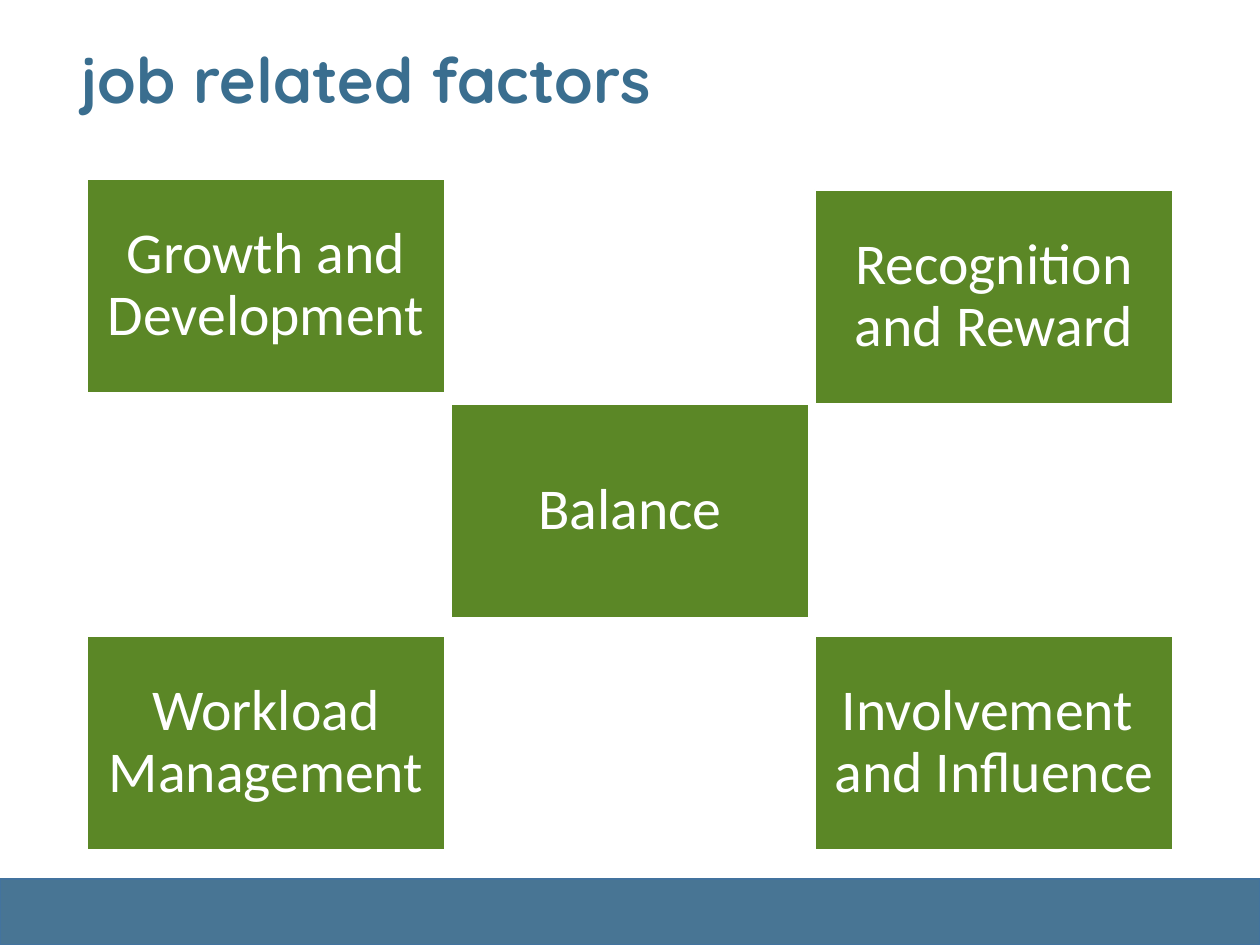
from pptx import Presentation
from pptx.dml.color import RGBColor
from pptx.enum.shapes import MSO_SHAPE
from pptx.enum.text import MSO_ANCHOR, MSO_AUTO_SIZE, PP_ALIGN
from pptx.util import Emu, Pt

PX = 914400 // 126
SLIDE_W, SLIDE_H = 1260, 945
CARD_W, CARD_H = 358, 214
LEFT, COLUMN_STEP = 87, 364
WHITE, GREEN, BLUE, BLUE_EDGE, TITLE_BLUE = (
    "FFFFFF", "5B8726", "487594", "43739E", "3A6E8F")

TITLE_FONT = {"name": "Quicksand", "size": Pt(36), "bold": True}
CARD_FONT = {"name": "Calibri", "size": Pt(33), "bold": False}
TITLE_FRAME = {"word_wrap": True, "auto_size": MSO_AUTO_SIZE.NONE,
               "vertical_anchor": MSO_ANCHOR.TOP}
CARD_FRAME = {"word_wrap": True, "vertical_anchor": MSO_ANCHOR.MIDDLE}

# column, top, text (\v is a line break)
FACTORS = [
    (0, 179, "Growth and Development"),
    (0, 636, "Workload\vManagement"),
    (1, 404, "Balance"),
    (2, 190, "Recognition and Reward"),
    (2, 636, "Involvement \vand Influence"),
]


def px(n):
    return Emu(n * PX)


def rgb(code):
    return RGBColor.from_string(code)


def apply(target, values):
    """Set each named attribute of target."""
    for name, value in values.items():
        setattr(target, name, value)


def write(tf, text, font, color, align):
    p = tf.paragraphs[0]
    p.text = text
    p.alignment = align
    apply(p.font, font)
    p.font.color.rgb = rgb(color)
    return p


def add_box(s, x, y, w, h, fill, line):
    sp = s.shapes.add_shape(MSO_SHAPE.RECTANGLE, px(x), px(y), px(w), px(h))
    sp.shadow.inherit = False
    sp.fill.solid()
    sp.fill.fore_color.rgb = rgb(fill)
    sp.line.color.rgb = rgb(line)
    sp.line.width = Pt(1)
    return sp


def set_title(s, text):
    title = s.shapes.title
    apply(title, {"left": px(68), "top": px(34),
                  "width": px(1081), "height": px(105)})
    apply(title.text_frame, TITLE_FRAME)
    write(title.text_frame, text, TITLE_FONT, TITLE_BLUE, PP_ALIGN.LEFT)


def add_card(s, column, top, text):
    sp = add_box(s, LEFT + column * COLUMN_STEP, top, CARD_W, CARD_H,
                 GREEN, WHITE)
    tf = sp.text_frame
    apply(tf, CARD_FRAME)
    for side in ("left", "top", "right", "bottom"):
        setattr(tf, f"margin_{side}", px(18))
    p = write(tf, text, CARD_FONT, WHITE, PP_ALIGN.CENTER)
    p.line_spacing = 0.9


def main():
    prs = Presentation()
    prs.slide_width, prs.slide_height = px(SLIDE_W), px(SLIDE_H)
    s = prs.slides.add_slide(prs.slide_layouts[5])
    add_box(s, 0, 879, SLIDE_W, 66, BLUE, BLUE_EDGE)
    set_title(s, "job related factors")
    for factor in FACTORS:
        add_card(s, *factor)
    prs.save("out.pptx")


if __name__ == "__main__":
    main()
